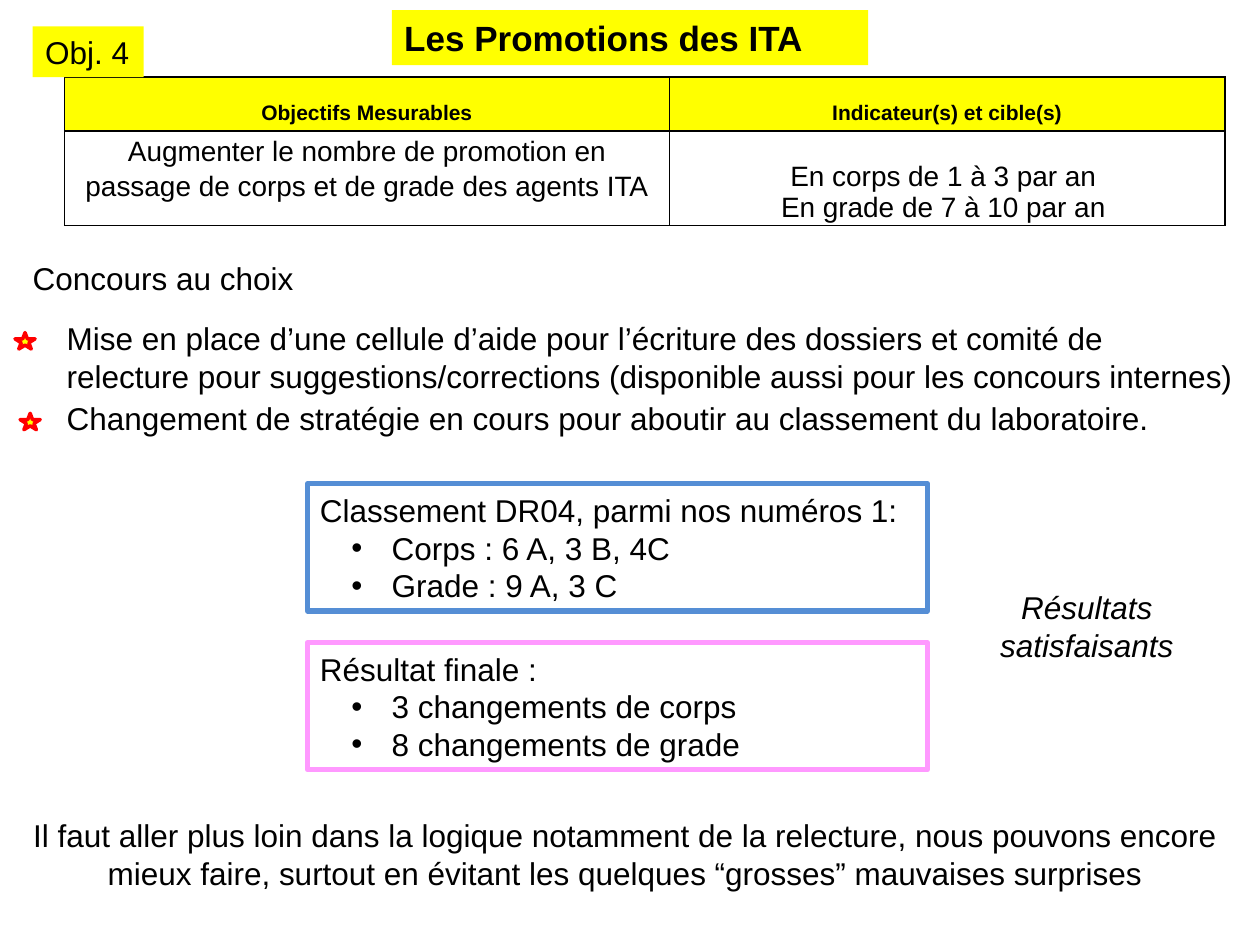
import pptx
import pptx.util
import pptx.dml.color
import pptx.enum.shapes
import pptx.enum.text
import pptx.oxml
import pptx.oxml.ns
import lxml.etree

Pt = pptx.util.Pt
LEFT = pptx.enum.text.PP_ALIGN.LEFT
CENTER = pptx.enum.text.PP_ALIGN.CENTER
RECTANGLE = pptx.enum.shapes.MSO_SHAPE.RECTANGLE
STAR = pptx.enum.shapes.MSO_SHAPE.STAR_5_POINT


def color(value):
    return pptx.dml.color.RGBColor.from_string(value)


def write(frame, text, size=18, align=LEFT, bold=False, italic=False):
    frame.text = text
    for paragraph in frame.paragraphs:
        paragraph.alignment = align
        for run in paragraph.runs:
            run.font.name = "Arial"
            run.font.size = Pt(size)
            run.font.bold = bold
            run.font.italic = italic
            run.font.color.rgb = color("000000")


presentation = pptx.Presentation()
presentation.slide_width = Pt(720)
presentation.slide_height = Pt(540)
slide = presentation.slides.add_slide(presentation.slide_layouts[6])

objectives = slide.shapes.add_table(2, 2, Pt(36.9), Pt(44), Pt(663.1), Pt(85)).table
objectives.first_row = False
objectives.horz_banding = False
for column, width in zip(objectives.columns, (345.6, 317.5)):
    column.width = Pt(width)
for row, height in zip(objectives.rows, (31, 54)):
    row.height = Pt(height)

cells = [
    (0, 0, "Objectifs Mesurables", 12, 14),
    (0, 1, "Indicateur(s) et cible(s)", 12, 14),
    (1, 0, "Augmenter le nombre de promotion en passage de corps et de grade des agents ITA", 16, 0),
    (1, 1, "En corps de 1 à 3 par an \nEn grade de 7 à 10 par an ", 16, 17),
]
for row, column, text, size, top in cells:
    cell = objectives.cell(row, column)
    cell.margin_left = cell.margin_right = Pt(5)
    cell.margin_top, cell.margin_bottom = Pt(top), Pt(0)
    write(cell.text_frame, text, size, CENTER, bold=row == 0)
    if row == 0:
        cell.fill.solid()
        cell.fill.fore_color.rgb = color("FFFF00")
    else:
        cell.fill.background()
    properties = cell._tc.get_or_add_tcPr()
    for position, side in enumerate("LRTB"):
        border = pptx.oxml.parse_xml(
            f'<a:ln{side} {pptx.oxml.ns.nsdecls("a")} w="12700"><a:solidFill>'
            f'<a:srgbClr val="000000"/></a:solidFill></a:ln{side}>'
        )
        properties.insert(position, border)
objectives.cell(1, 0).text_frame.paragraphs[0].line_spacing = 1.15

labels = [
    ("Obj. 4", 18.7, 15.1, 63.4, 29, 18, False),
    ("Les Promotions des ITA", 223.9, 5.8, 272.2, 31.5, 20, True),
]
for text, left, top, width, height, size, bold in labels:
    label = slide.shapes.add_shape(RECTANGLE, Pt(left), Pt(top), Pt(width), Pt(height))
    label.shadow.inherit = False
    label.fill.solid()
    label.fill.fore_color.rgb = color("FFFF00")
    label.line.fill.background()
    label.text_frame.word_wrap = bold
    label.text_frame.auto_size = pptx.enum.text.MSO_AUTO_SIZE.SHAPE_TO_FIT_TEXT
    write(label.text_frame, text, size, bold=bold)

statements = [
    ("Concours au choix", 11.5, 144.7, 164.9, 29, False, LEFT, False),
    ("Mise en place d’une cellule d’aide pour l’écriture des dossiers et comité de\n"
     "relecture pour suggestions/corrections (disponible aussi pour les concours internes)",
     31, 178.6, 681.1, 51, False, LEFT, False),
    ("Changement de stratégie en cours pour aboutir au classement du laboratoire.",
     31, 224.6, 652.3, 29, True, LEFT, False),
    ("Il faut aller plus loin dans la logique notamment de la relecture, nous pouvons encore "
     "mieux faire, surtout en évitant les quelques “grosses” mauvaises surprises",
     2.9, 463, 708.5, 51, True, CENTER, False),
    ("Résultats\nsatisfaisants", 563.8, 332.6, 114.5, 51, False, CENTER, True),
]
for text, left, top, width, height, wrap, align, italic in statements:
    statement = slide.shapes.add_textbox(Pt(left), Pt(top), Pt(width), Pt(height))
    statement.text_frame.word_wrap = wrap
    statement.text_frame.auto_size = pptx.enum.text.MSO_AUTO_SIZE.SHAPE_TO_FIT_TEXT
    write(statement.text_frame, text, align=align, italic=italic)

for left, top in ((8.6, 190.1), (11.5, 236.2)):
    star = slide.shapes.add_shape(STAR, Pt(left), Pt(top), Pt(11.5), Pt(9.4))
    star.shadow.inherit = False
    star.fill.solid()
    star.fill.fore_color.rgb = color("FFFF00")
    star.line.color.rgb = color("FF0000")
    star.line.width = Pt(2)

results = [
    ("Classement DR04, parmi nos numéros 1:\n Corps : 6 A, 3 B, 4C\n Grade : 9 A, 3 C", 276.5, "558ED5"),
    ("Résultat finale :\n 3 changements de corps\n 8 changements de grade", 367.2, "FF99FF"),
]
for text, top, outline in results:
    result = slide.shapes.add_shape(RECTANGLE, Pt(175.7), Pt(top), Pt(354.2), Pt(72.7))
    result.shadow.inherit = False
    result.fill.background()
    result.line.color.rgb = color(outline)
    result.line.width = Pt(3)
    result.text_frame.word_wrap = True
    result.text_frame.auto_size = pptx.enum.text.MSO_AUTO_SIZE.SHAPE_TO_FIT_TEXT
    write(result.text_frame, text)
    for item in result.text_frame.paragraphs[1:]:
        item.level = 1
        properties = item._p.get_or_add_pPr()
        properties.set("marL", str(Pt(36)))
        properties.set("indent", str(Pt(-18)))
        for tag, key, value in (("a:buFont", "typeface", "Arial"), ("a:buChar", "char", "•")):
            bullet = lxml.etree.SubElement(properties, pptx.oxml.ns.qn(tag))
            bullet.set(key, value)

presentation.save("out.pptx")
